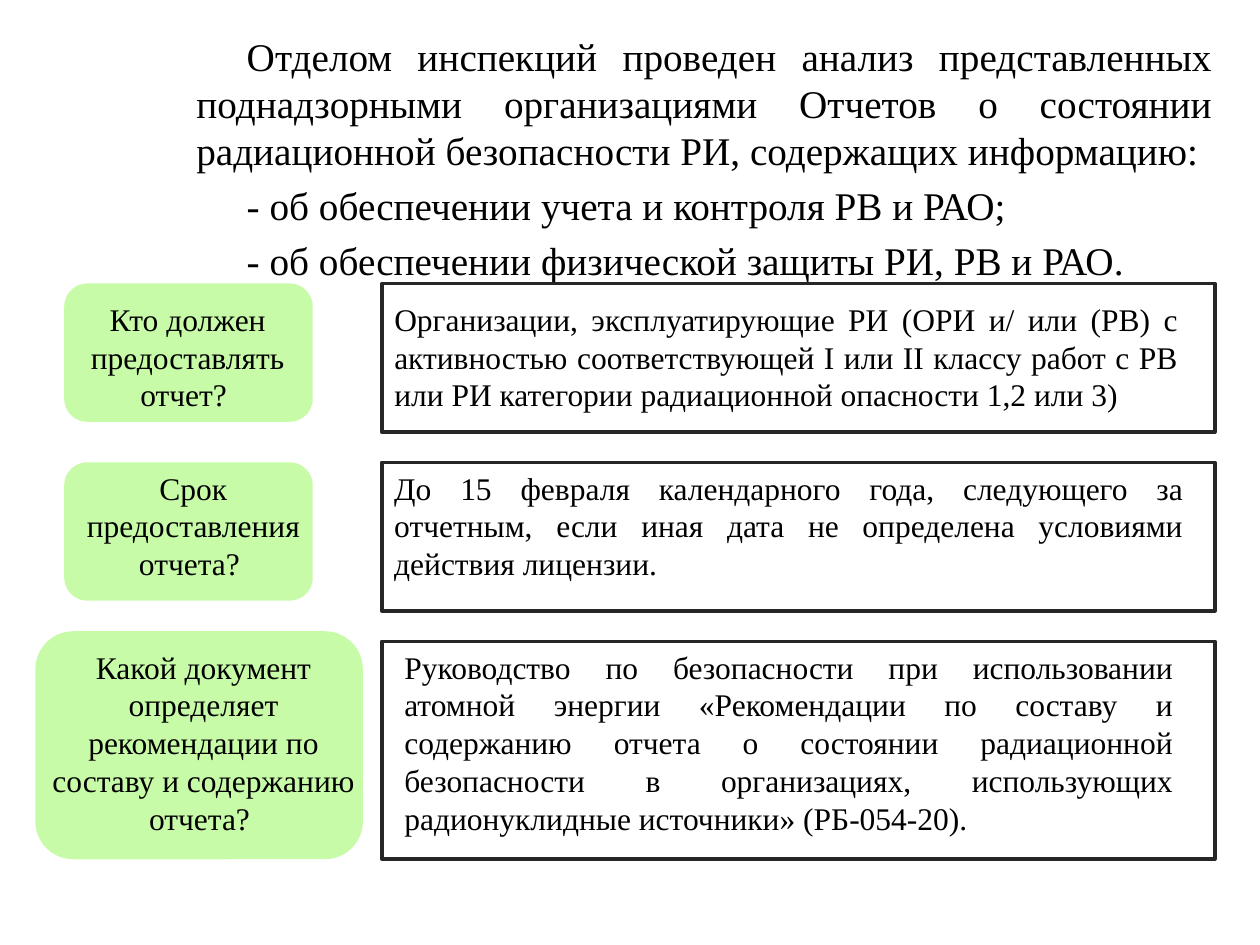
from pptx import Presentation
from pptx.dml.color import RGBColor
from pptx.enum.shapes import MSO_SHAPE as SHAPE
from pptx.enum.text import MSO_ANCHOR as ANCHOR, MSO_AUTO_SIZE as AUTO, PP_ALIGN as ALIGN
from pptx.util import Pt
from lxml import etree

FONT = "Times New Roman"
GREEN, DARK, BLACK = "C7FBA7", "262626", "000000"

INTRO = [
    "Отделом инспекций проведен анализ представленных поднадзорными организациями "
    "Отчетов о состоянии радиационной безопасности РИ, содержащих информацию:",
    "- об обеспечении учета и контроля РВ и РАО;",
    "- об обеспечении физической защиты РИ, РВ и РАО. ",
]

# Each box is left, top, width, height; each text area is dx, dy, width, height
# relative to its box
ROWS = [
    dict(q="Кто должен предоставлять отчет? ",
         q_box=(36.7, 162, 142, 79), q_area=(-11.5, 5.8, 164, 72.7),
         a="Организации, эксплуатирующие РИ (ОРИ и/ или (РВ) с активностью "
           "соответствующей I или II классу работ с РВ или РИ категории "
           "радиационной опасности 1,2 или 3) ",
         a_box=(218.2, 162, 476, 85), a_area=(0, 5.8, 462.2, 72.7)),
    dict(q="Срок предоставления отчета? ",
         q_box=(36.7, 264.2, 142, 79), q_area=(0, 0, 147.6, 72.7),
         a="До 15 февраля календарного года, следующего за отчетным, если иная "
           "дата не определена условиями действия лицензии.",
         a_box=(218.2, 264.2, 476, 85), a_area=(0, 0, 465.1, 72.7)),
    dict(q="Какой документ определяет рекомендации по составу и содержанию отчета? ",
         q_box=(20.2, 360.7, 187.2, 130.3), q_area=(-5.8, 5.8, 203.8, 118.8),
         a="Руководство по безопасности при использовании атомной энергии "
           "«Рекомендации по составу и содержанию отчета о состоянии радиационной "
           "безопасности в организациях, использующих радионуклидные источники» "
           "(РБ-054-20).",
         a_box=(218.2, 366.5, 476, 124.5), a_area=(5.8, 0, 453.6, 116.6)),
]


def color(value):
    return RGBColor.from_string(value)


def format_paragraph(p, text, size, align):
    p.alignment = align
    r = p.add_run()
    r.text = text
    for name, value in dict(name=FONT, size=Pt(size)).items():
        setattr(r.font, name, value)
    r.font.color.rgb = color(BLACK)


def add_box(slide, kind, box, fill=None, line=None):
    sp = slide.shapes.add_shape(kind, *map(Pt, box))
    sp.shadow.inherit = False
    if fill:
        sp.fill.solid()
        sp.fill.fore_color.rgb = color(fill)
    else:
        sp.fill.background()
    if line:
        sp.line.color.rgb = color(line)
        sp.line.width = Pt(2)
    else:
        sp.line.fill.background()


def add_text(slide, box, area, text, align):
    left, top = box[:2]
    dx, dy, width, height = area
    sp = slide.shapes.add_textbox(Pt(left + dx), Pt(top + dy), Pt(width), Pt(height))
    tf = sp.text_frame
    for name, value in dict(word_wrap=True, auto_size=AUTO.SHAPE_TO_FIT_TEXT).items():
        setattr(tf, name, value)
    format_paragraph(tf.paragraphs[0], text, 18, align)


def add_intro(slide, box):
    sp = slide.placeholders[1]
    for name, value in zip(("left", "top", "width", "height"), box):
        setattr(sp, name, Pt(value))
    tf = sp.text_frame
    for name, value in dict(word_wrap=True, auto_size=AUTO.NONE,
                            vertical_anchor=ANCHOR.TOP).items():
        setattr(tf, name, value)
    for i, text in enumerate(INTRO):
        p = tf.add_paragraph() if i else tf.paragraphs[0]
        format_paragraph(p, text, 22.4, ALIGN.JUSTIFY)
        # First-line indent without a bullet
        pPr = p._p.get_or_add_pPr()
        pPr.set("marL", "0")
        pPr.set("indent", str(Pt(28.8)))
        etree.SubElement(pPr, "{http://schemas.openxmlformats.org/drawingml/2006/main}buNone")


def add_question(slide, box, area, text):
    add_box(slide, SHAPE.ROUNDED_RECTANGLE, box, fill=GREEN)
    add_text(slide, box, area, text, ALIGN.CENTER)


def add_answer(slide, box, area, text):
    add_box(slide, SHAPE.RECTANGLE, box, line=DARK)
    add_text(slide, box, area, text, ALIGN.JUSTIFY)


def main():
    prs = Presentation()
    prs.slide_width, prs.slide_height = Pt(720), Pt(540)
    slide = prs.slides.add_slide(prs.slide_layouts[1])

    # The slide has no title
    title = slide.shapes.title._element
    title.getparent().remove(title)

    # Introduction, then questions with their answers
    add_intro(slide, (105, 15, 595.5, 130.3))
    for row in ROWS:
        add_question(slide, row["q_box"], row["q_area"], row["q"])
        add_answer(slide, row["a_box"], row["a_area"], row["a"])

    prs.save("out.pptx")


if __name__ == "__main__":
    main()
